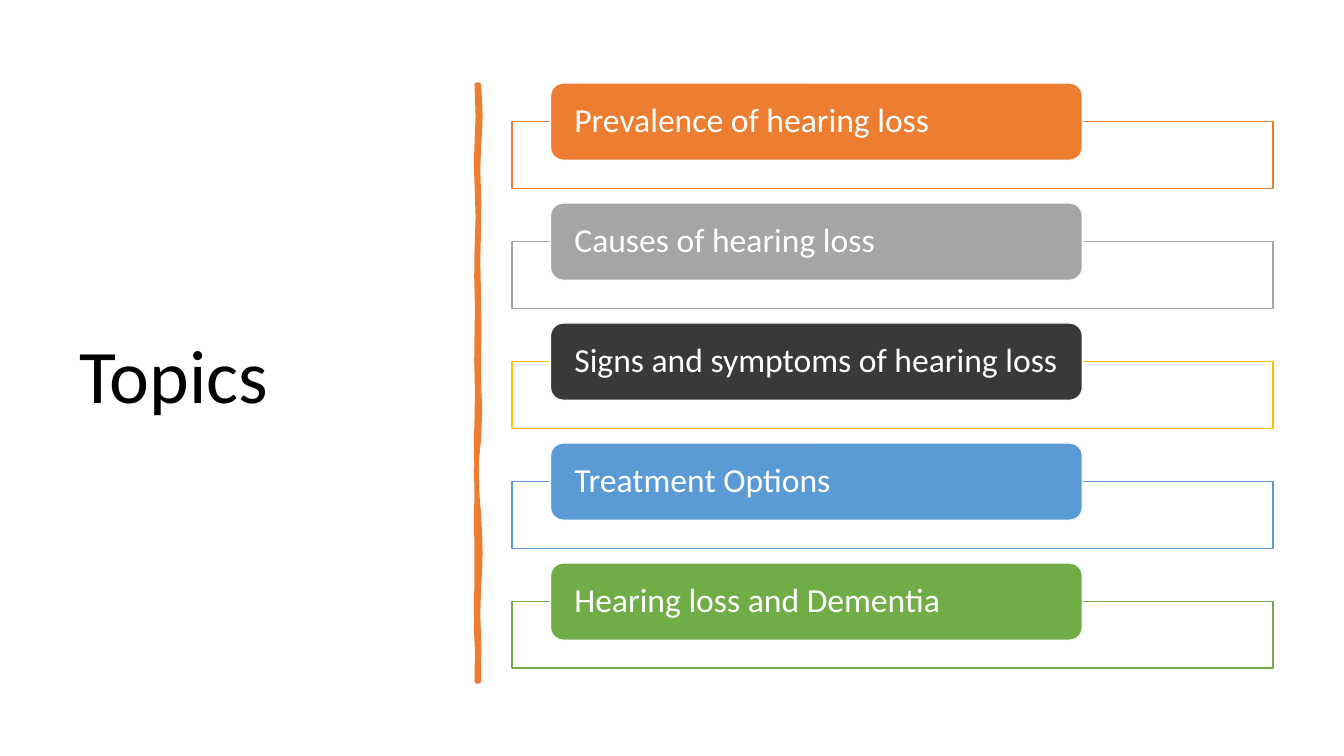
from dataclasses import dataclass

from lxml.etree import SubElement
from pptx import Presentation
from pptx.dml.color import RGBColor
from pptx.enum.shapes import MSO_SHAPE
from pptx.enum.text import MSO_ANCHOR, PP_ALIGN
from pptx.oxml.ns import qn
from pptx.util import Pt


@dataclass(frozen=True)
class Theme:
    font: str = "Calibri"
    title_size: float = 54
    topic_size: float = 24
    black: str = "000000"
    white: str = "FFFFFF"
    orange: str = "ED7D31"
    gray: str = "A5A5A5"
    gold: str = "FFC000"
    charcoal: str = "3B3838"
    blue: str = "5B9BD5"
    green: str = "70AD47"


THEME = Theme()

# Topic, bar colour, frame colour
TOPICS = [
    ("Prevalence of hearing loss", THEME.orange, THEME.orange),
    ("Causes of hearing loss", THEME.gray, THEME.gray),
    ("Signs and symptoms of hearing loss", THEME.charcoal, THEME.gold),
    ("Treatment Options", THEME.blue, THEME.blue),
    ("Hearing loss and Dementia", THEME.green, THEME.green),
]
FIRST_BAR_TOP, ROW_PITCH = 59.3, 85.7
BAR_LEFT, BAR_WIDTH, BAR_HEIGHT = 393.2, 380, 55.2
FRAME_LEFT, FRAME_WIDTH, FRAME_HEIGHT = 365.8, 543.6, 47.6

# Hand-drawn divider: right edge downwards, then left edge upwards
DIVIDER_OUTLINE = [
    (342, 60.5), (342.8, 72), (343.1, 83), (342.8, 94), (342, 105),
    (341.5, 122), (342.2, 144), (342, 163), (341.5, 187), (342, 212),
    (342.3, 238), (342, 256), (342, 274), (342.9, 292), (342, 314),
    (340.8, 326), (340.1, 338), (340.8, 352), (342, 367), (342.8, 381),
    (343.1, 395), (342.8, 408), (342, 420), (341.5, 439), (342.2, 461),
    (342, 486.7), (340.6, 486.7), (340.9, 464), (340.2, 450), (340.6, 401),
    (340.3, 372), (340.6, 343), (340.2, 316), (340.6, 299), (340.9, 280),
    (340.4, 258), (340.6, 241), (340.9, 220), (340.4, 198), (340.6, 180),
    (341.4, 155), (340.6, 130), (340.1, 118), (340.7, 100), (341.4, 83),
    (340.6, 60.5),
]


class TopicSlide:
    def __init__(self, slide, theme):
        self.slide = slide
        self.theme = theme

    def paint(self, shape, fill, line, line_width):
        shape.shadow.inherit = False
        shape.fill.solid()
        shape.fill.fore_color.rgb = RGBColor.from_string(fill)
        shape.line.color.rgb = RGBColor.from_string(line)
        shape.line.width = Pt(line_width)

    def set_text(self, shape, text, size, color, margins):
        frame = shape.text_frame
        frame.word_wrap = True
        frame.vertical_anchor = MSO_ANCHOR.MIDDLE
        horizontal, vertical = margins
        frame.margin_left = frame.margin_right = Pt(horizontal)
        frame.margin_top = frame.margin_bottom = Pt(vertical)
        paragraph = frame.paragraphs[0]
        paragraph.text = text
        paragraph.alignment = PP_ALIGN.LEFT
        paragraph.line_spacing = 0.9
        paragraph.font.name = self.theme.font
        paragraph.font.size = Pt(size)
        paragraph.font.color.rgb = RGBColor.from_string(color)

    def title(self, text, left, top, width, height):
        box = self.slide.shapes.add_textbox(Pt(left), Pt(top), Pt(width), Pt(height))
        self.set_text(box, text, self.theme.title_size, self.theme.black, (7.2, 3.6))

    def divider(self, outline, color):
        points = [(Pt(x), Pt(y)) for x, y in outline]
        builder = self.slide.shapes.build_freeform(*points[0])
        builder.add_line_segments(points[1:], close=True)
        self.paint(builder.convert_to_shape(), color, color, 3.25)

    def frame(self, left, top, width, height, color):
        shape = self.slide.shapes.add_shape(
            MSO_SHAPE.RECTANGLE, Pt(left), Pt(top), Pt(width), Pt(height))
        self.paint(shape, self.theme.white, color, 1)
        fill_color = shape.element.spPr.find(qn("a:solidFill"))[0]
        SubElement(fill_color, qn("a:alpha"), val="90000")

    def bar(self, text, left, top, width, height, color):
        shape = self.slide.shapes.add_shape(
            MSO_SHAPE.ROUNDED_RECTANGLE, Pt(left), Pt(top), Pt(width), Pt(height))
        self.paint(shape, color, self.theme.white, 1)
        self.set_text(shape, text, self.theme.topic_size, self.theme.white, (14.4, 0))


def main():
    presentation = Presentation()
    presentation.slide_width, presentation.slide_height = Pt(960), Pt(540)
    slide = presentation.slides.add_slide(presentation.slide_layouts[6])
    page = TopicSlide(slide, THEME)

    # Title and divider
    page.title("Topics", 49.7, 50.4, 269.3, 440)
    page.divider(DIVIDER_OUTLINE, THEME.orange)

    # Topic rows: each frame starts at the middle of its bar
    for row, (topic, bar_color, frame_color) in enumerate(TOPICS):
        top = FIRST_BAR_TOP + row * ROW_PITCH
        page.frame(FRAME_LEFT, top + BAR_HEIGHT / 2, FRAME_WIDTH, FRAME_HEIGHT, frame_color)
        page.bar(topic, BAR_LEFT, top, BAR_WIDTH, BAR_HEIGHT, bar_color)

    presentation.save("out.pptx")


if __name__ == "__main__":
    main()
